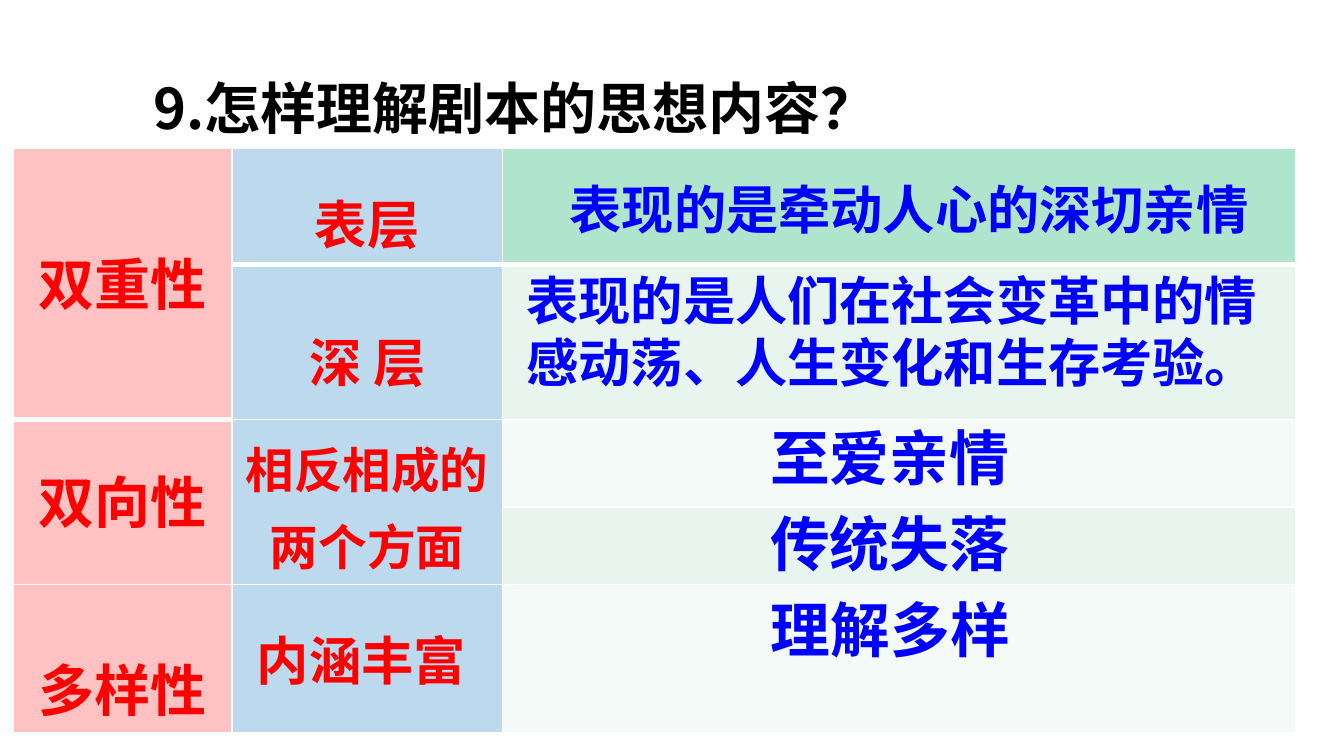
from lxml.etree import SubElement
from pptx import Presentation
from pptx.dml.color import RGBColor
from pptx.enum.text import MSO_ANCHOR as Anchor, MSO_AUTO_SIZE as AutoSize, PP_ALIGN as Align
from pptx.oxml import parse_xml
from pptx.oxml.ns import nsdecls, qn
from pptx.util import Pt

FONT = "Noto Sans CJK SC"
COLORS = {
    "title": "000000", "label": "FF0000", "answer": "0000FF", "border": "FFFFFF",
    "trait": "FF0000", "aspect": "0070C0",
    "head": "56CA95", "dark": "D1ECDD", "light": "E9F6EF",
}
OPACITY = {"trait": 24, "aspect": 26, "head": 48, "dark": 48, "light": 48}


def add_text(paragraph, text, size, color, align=Align.LEFT):
    """Add one bold run in the slide's font, for Latin and East Asian letters."""
    paragraph.alignment = align
    run = paragraph.add_run()
    run.text = text
    run.font.size = Pt(size)
    run.font.bold = True
    run.font.name = FONT
    run.font.color.rgb = RGBColor.from_string(COLORS[color])
    SubElement(run.font._element, qn("a:ea"), typeface=FONT)


def style_cell(cell, tint, bottom):
    """Give a cell its translucent fill and white borders."""
    cell.fill.solid()
    cell.fill.fore_color.rgb = RGBColor.from_string(COLORS[tint])
    properties = cell._tc.get_or_add_tcPr()
    fill_color = properties.find(qn("a:solidFill")).find(qn("a:srgbClr"))
    SubElement(fill_color, qn("a:alpha"), val=str(OPACITY[tint] * 1000))
    widths = {"lnL": 1, "lnR": 1, "lnT": 1, "lnB": bottom}
    for position, (side, width) in enumerate(widths.items()):
        properties.insert(position, parse_xml(
            f'<a:{side} {nsdecls("a")} w="{Pt(width)}"><a:solidFill>'
            f'<a:srgbClr val="{COLORS["border"]}"/></a:solidFill></a:{side}>'))


def build_title(slide, box, text):
    """Place the question in the title placeholder."""
    title = slide.shapes.title
    title.left, title.top, title.width, title.height = map(Pt, box)
    frame = title.text_frame
    frame.word_wrap = True
    frame.auto_size = AutoSize.NONE
    frame.vertical_anchor = Anchor.TOP
    add_text(frame.paragraphs[0], text, 30, "title")


def build_table(slide, box):
    """Build the grid of traits and aspects, with room for the answers."""
    columns = [117, 145, 425]
    rows = [57, 83, 47, 40, 67]
    answer_tints = ["head", "dark", "light", "dark", "light"]
    labels = [
        (0, 0, 2, "双重性", 30, 0.9, Anchor.MIDDLE),
        (0, 1, 1, "表层", 28, 1.4, Anchor.TOP),
        (1, 1, 1, "深 层", 28, 1.7, Anchor.TOP),
        (2, 0, 2, "双向性", 30, 0.9, Anchor.MIDDLE),
        (2, 1, 2, "相反相成的两个方面", 26, 1.1, Anchor.MIDDLE),
        (4, 0, 1, "多样性", 30, 1.7, Anchor.TOP),
        (4, 1, 1, "内涵丰富 ", 28, 1.4, Anchor.TOP),
    ]
    grid = slide.shapes.add_table(len(rows), len(columns), *map(Pt, box)).table
    for column, width in zip(grid.columns, columns):
        column.width = Pt(width)
    for index, (row, height) in enumerate(zip(grid.rows, rows)):
        row.height = Pt(height)
        for cell, tint in zip(row.cells, ["trait", "aspect", answer_tints[index]]):
            style_cell(cell, tint, 3 if index == 0 else 1)
    for row, column, span, text, size, spacing, anchor in labels:
        cell = grid.cell(row, column)
        if span > 1:
            cell.merge(grid.cell(row + span - 1, column))
        cell.margin_left = cell.margin_right = Pt(5.6)
        cell.margin_top = cell.margin_bottom = Pt(2.8)
        cell.vertical_anchor = anchor
        paragraph = cell.text_frame.paragraphs[0]
        paragraph.line_spacing = spacing
        add_text(paragraph, text, size, "label", Align.CENTER)


def build_answer(slide, box, text, size, align=Align.LEFT, wrap=False):
    """Place one answer over the table's right column."""
    frame = slide.shapes.add_textbox(*map(Pt, box)).text_frame
    frame.word_wrap = wrap
    frame.auto_size = AutoSize.SHAPE_TO_FIT_TEXT
    add_text(frame.paragraphs[0], text, size, "answer", align)


def build_answers(slide, box):
    """Place the two long answers and the stack of short ones."""
    left, top, width, _ = box
    build_answer(slide, (left + 22, top, 380, 41), "表现的是牵动人心的深切亲情", 28, Align.CENTER)
    build_answer(slide, (left, top + 48.5, width, 75),
                 "表现的是人们在社会变革中的情感动荡、人生变化和生存考验。", 28, wrap=True)
    short_answers = [("至爱亲情", Align.LEFT), ("传统失落", Align.LEFT), ("理解多样", Align.CENTER)]
    for index, (text, align) in enumerate(short_answers):
        place = (left + 130.5, top + 130.5 + 46 * index, 143, 46)
        build_answer(slide, place, text, 32, align)


def main():
    """Build and save the slide."""
    deck = Presentation()
    deck.slide_width, deck.slide_height = Pt(720), Pt(405)
    slide = deck.slides.add_slide(deck.slide_layouts[5])
    build_table(slide, (7.2, 79.5, 687, 294))
    build_answers(slide, (275, 91.5, 424, 269))
    build_title(slide, (75, 36, 436, 43), "9.怎样理解剧本的思想内容？")
    deck.save("out.pptx")


if __name__ == "__main__":
    main()
